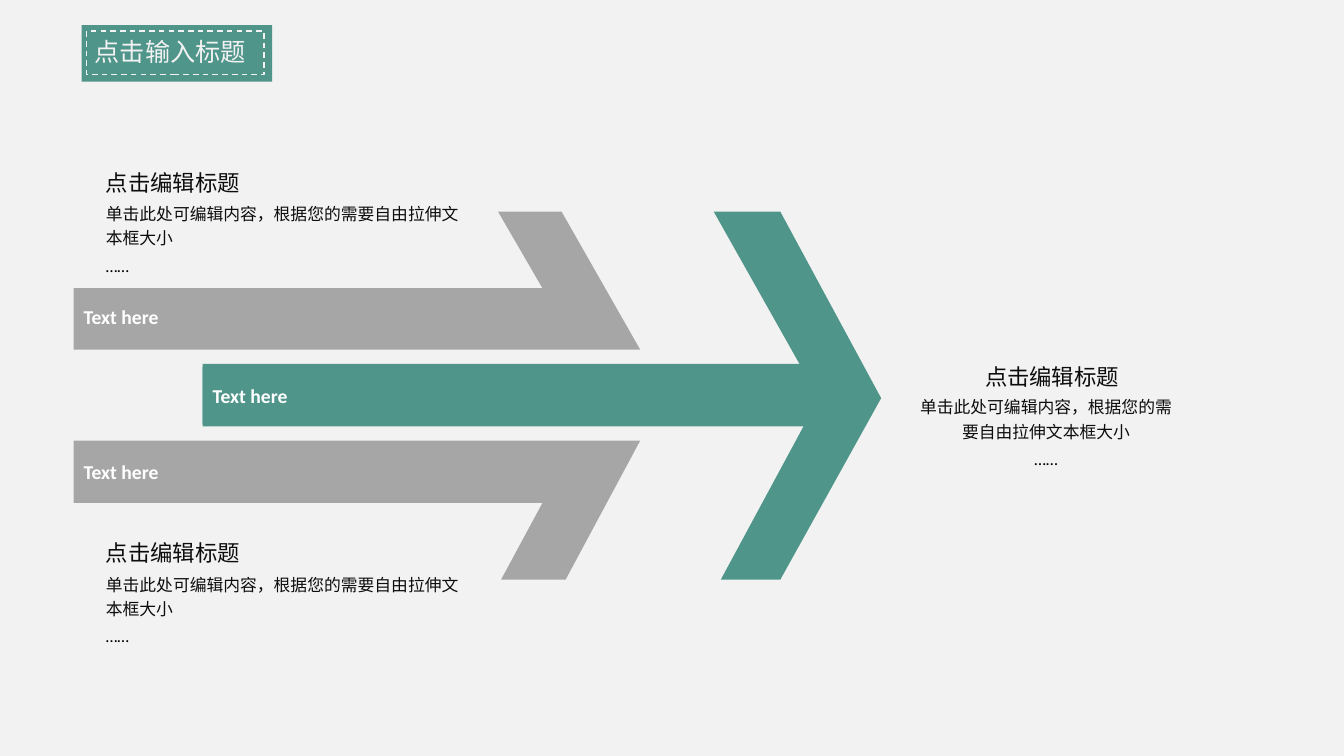
import pptx
import pptx.util
import pptx.dml.color
import pptx.enum.dml
import pptx.enum.shapes
import pptx.enum.text
import pptx.oxml.ns
import lxml.etree

Inches = pptx.util.Inches
Pt = pptx.util.Pt
RGBColor = pptx.dml.color.RGBColor
ALIGN = pptx.enum.text.PP_ALIGN
ANCHOR = pptx.enum.text.MSO_ANCHOR

TEAL = RGBColor(0x4F, 0x95, 0x8A)
GRAY = RGBColor(0xA6, 0xA6, 0xA6)
PALE = RGBColor(0xF2, 0xF2, 0xF2)
WHITE = RGBColor(0xFF, 0xFF, 0xFF)
INK = RGBColor(0x0D, 0x0D, 0x0D)
BLACK = RGBColor(0x00, 0x00, 0x00)

HEADING = "点击编辑标题"
BODY = "单击此处可编辑内容，根据您的需要自由拉伸文本框大小"

UPPER_ARROW = [(0.73, 2.86), (5.38, 2.86), (4.94, 2.1), (5.57, 2.1), (6.35, 3.47), (0.73, 3.47)]
LOWER_ARROW = [(0.73, 4.99), (5.38, 4.99), (4.97, 5.75), (5.61, 5.75), (6.35, 4.37), (0.73, 4.37)]
MAIN_ARROW = [(2.01, 3.61), (7.93, 3.61), (7.08, 2.1), (7.74, 2.1), (8.74, 3.95),
              (7.74, 5.75), (7.15, 5.75), (7.97, 4.23), (2.01, 4.23)]


def add_text(p, text, *, size, color, font="Calibri", bold=False, align=ALIGN.LEFT, spaced=False):
    """Write one formatted run into a paragraph."""
    p.alignment = align
    if spaced:
        p.line_spacing = 1.2
        p.space_before = Pt(size * 0.2)
    r = p.add_run()
    r.text = text
    r.font.size = Pt(size)
    r.font.bold = bold
    r.font.name = font
    r.font.color.rgb = color
    ea = lxml.etree.SubElement(r.font.element if hasattr(r.font, "element") else r._r.get_or_add_rPr(),
                               pptx.oxml.ns.qn("a:ea"))
    ea.set("typeface", font)


def add_arrow(s, points, color):
    """Draw a filled arrow outline through points in inches."""
    corners = [(Inches(x), Inches(y)) for x, y in points]
    builder = s.shapes.build_freeform(*corners[0], scale=1.0)
    builder.add_line_segments(corners[1:], close=True)
    sp = builder.convert_to_shape()
    sp.shadow.inherit = False
    sp.fill.solid()
    sp.fill.fore_color.rgb = color
    sp.line.fill.background()


def add_rect(s, left, top, width, height, fill=None):
    """Add a plain rectangle without an outline."""
    sp = s.shapes.add_shape(pptx.enum.shapes.MSO_SHAPE.RECTANGLE,
                            Inches(left), Inches(top), Inches(width), Inches(height))
    sp.shadow.inherit = False
    sp.line.fill.background()
    if fill is None:
        sp.fill.background()
    else:
        sp.fill.solid()
        sp.fill.fore_color.rgb = fill
    return sp


def add_box(s, left, top, width, height, inset=0):
    """Add a wrapping text box and return its text frame."""
    tf = s.shapes.add_textbox(Inches(left), Inches(top), Inches(width), Inches(height)).text_frame
    tf.word_wrap = True
    tf.margin_left = tf.margin_right = Inches(inset)
    tf.margin_top = tf.margin_bottom = Inches(inset / 2)
    return tf


def add_label(tf):
    """Write an arrow label into a text frame."""
    tf.vertical_anchor = ANCHOR.MIDDLE
    add_text(tf.paragraphs[0], "Text here", size=14, color=WHITE, bold=True)


def add_note(s, heading_at, body_at, align=ALIGN.LEFT):
    """Add a heading with a description below it."""
    tf = add_box(s, *heading_at)
    add_text(tf.paragraphs[0], HEADING, size=16, color=INK, align=align, spaced=True)
    tf = add_box(s, *body_at)
    add_text(tf.paragraphs[0], BODY, size=12, color=INK, align=align, spaced=True)
    add_text(tf.add_paragraph(), "……", size=12, color=BLACK, align=align, spaced=True)


def add_title(s):
    """Place the title on its badge with a dashed border."""
    add_rect(s, 0.81, 0.25, 1.89, 0.56, TEAL)
    border = add_rect(s, 0.86, 0.31, 1.76, 0.43)
    border.line.color.rgb = PALE
    border.line.width = Pt(1)
    border.line.dash_style = pptx.enum.dml.MSO_LINE.DASH
    title = s.shapes.title
    title.left, title.top = Inches(0.84), Inches(0.31)
    title.width, title.height = Inches(1.94), Inches(0.4)
    s.shapes.element.append(title.element)
    tf = title.text_frame
    tf.word_wrap = True
    tf.auto_size = pptx.enum.text.MSO_AUTO_SIZE.NONE
    tf.vertical_anchor = ANCHOR.TOP
    add_text(tf.paragraphs[0], "点击输入标题", size=18, color=PALE, font="Noto Sans CJK SC")


def main():
    """Build and save the slide."""
    prs = pptx.Presentation()
    prs.slide_width, prs.slide_height = Inches(13.33), Inches(7.5)
    s = prs.slides.add_slide(prs.slide_layouts[5])
    s.background.fill.solid()
    s.background.fill.fore_color.rgb = PALE

    add_arrow(s, UPPER_ARROW, GRAY)
    add_arrow(s, LOWER_ARROW, GRAY)
    add_arrow(s, MAIN_ARROW, TEAL)
    for top in (2.86, 4.39):
        add_label(add_box(s, 0.73, top, 4.65, 0.57, inset=0.1))
    add_label(add_rect(s, 2.01, 3.64, 4.76, 0.57, TEAL).text_frame)

    add_title(s)
    add_note(s, (9.67, 3.55, 1.53, 0.32), (9.1, 3.9, 2.55, 0.77), ALIGN.CENTER)
    for top in (1.62, 5.3):
        add_note(s, (1.05, top, 2.17, 0.32), (1.05, top + 0.36, 3.61, 0.77))
    prs.save("out.pptx")


if __name__ == "__main__":
    main()
